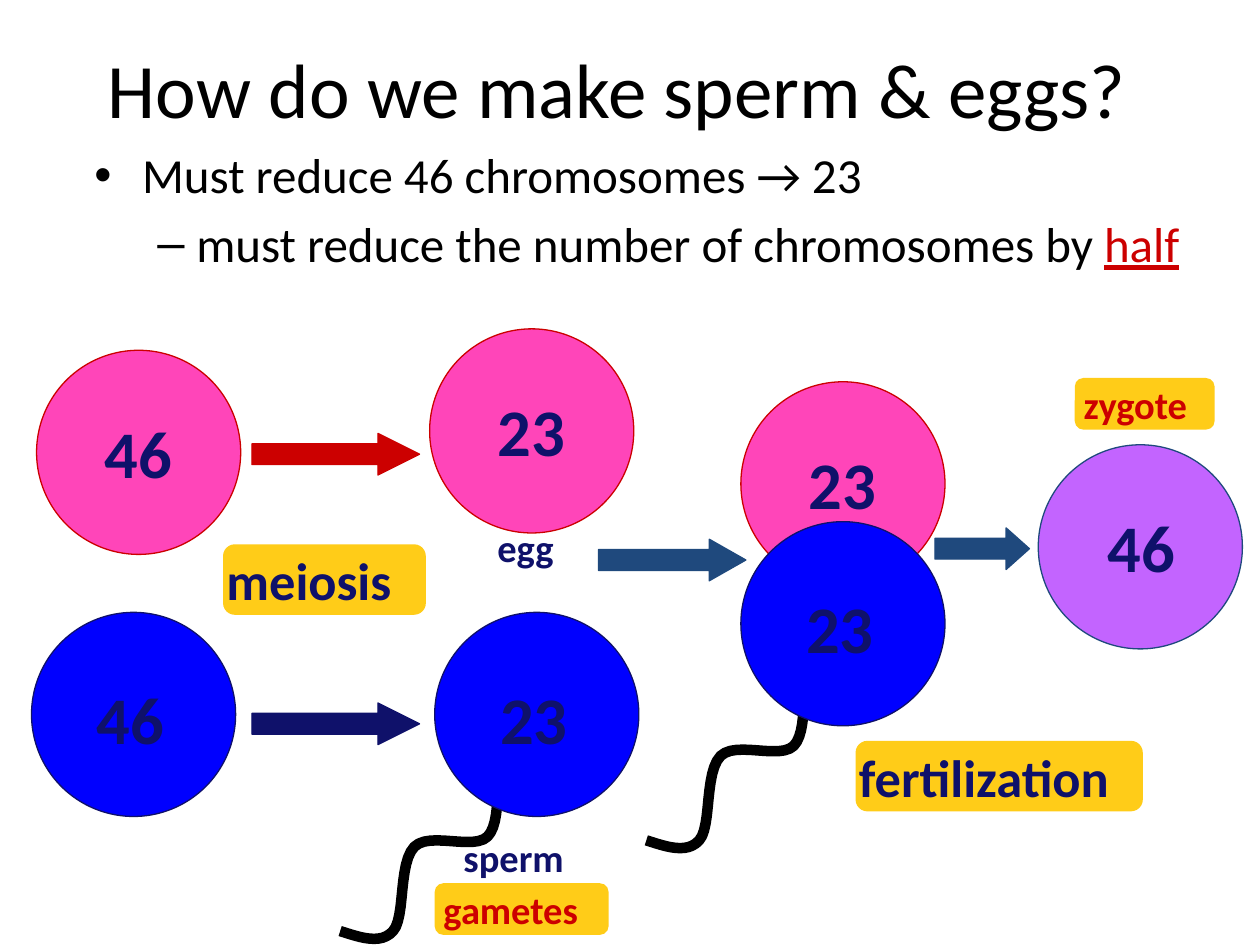
import pptx
import pptx.dml.color
import pptx.enum.shapes
import pptx.enum.text
import pptx.util
from lxml import etree

RGB = pptx.dml.color.RGBColor
SHAPE = pptx.enum.shapes.MSO_SHAPE
ALIGN = pptx.enum.text.PP_ALIGN
ANCHOR = pptx.enum.text.MSO_ANCHOR
Inches, Pt = pptx.util.Inches, pptx.util.Pt

BLACK = RGB(0x00, 0x00, 0x00)
RED = RGB(0xCC, 0x00, 0x00)
NAVY = RGB(0x0F, 0x11, 0x6A)
STEEL = RGB(0x1F, 0x49, 0x7D)
PINK = RGB(0xFF, 0x45, 0xB9)
BLUE = RGB(0x00, 0x00, 0xFF)
PURPLE = RGB(0xC3, 0x64, 0xFF)
YELLOW = RGB(0xFF, 0xCC, 0x18)

FONT = "Calibri"
CELL = 1.62
NUMBER = (0.79, 0.73)
ARROW_H = 0.33
TAG_H = {30: 0.56, 22: 0.41}

TITLE = "How do we make sperm & eggs?"
# bullet, left margin, hanging indent, runs of (text, format)
BULLETS = [
    ("•", 0.38, 0.38, [("Must reduce 46 chromosomes → 23", {})]),
    ("–", 0.81, 0.31, [("must reduce the number of chromosomes by ", {}),
                       ("half", {"color": RED, "underline": True})]),
]
# kind: fill, outline, offset of the number in the cell
CELL_KINDS = {
    "female": (PINK, RED, (0.44, 0.44)),
    "male": (BLUE, NAVY, (0.42, 0.47)),
    "zygote": (PURPLE, STEEL, (0.45, 0.44)),
}
# kind, chromosomes, left, top, has a tail; from back to front
CELLS = [
    ("female", "23", 3.41, 2.61, False),
    ("male", "23", 3.45, 4.86, True),
    ("male", "46", 0.25, 4.86, False),
    ("female", "46", 0.29, 2.78, False),
    ("zygote", "46", 8.24, 3.53, False),
    ("female", "23", 5.88, 3.03, False),
    ("male", "23", 5.88, 4.14, True),
]
# colour, left, top, width, head length as a share of the height
ARROWS = [
    (STEEL, 7.42, 4.19, 0.75, 0.56),
    (RED, 2.0, 3.44, 1.33, 1.0),
    (NAVY, 2.0, 5.58, 1.33, 1.0),
    (STEEL, 4.75, 4.28, 1.17, 0.88),
]
# text, left, top, width, size, colour, side inset
TAGS = [
    ("meiosis", 1.77, 4.32, 1.61, 30, NAVY, 0),
    ("fertilization", 6.79, 5.88, 2.28, 30, NAVY, 0),
    ("gametes", 3.45, 7.01, 1.38, 22, RED, 0.05),
    ("zygote", 8.53, 3.0, 1.11, 22, RED, 0.05),
]
# text, left, top, width
CAPTIONS = [("egg", 3.85, 4.11, 0.74), ("sperm", 3.58, 6.57, 1.12)]
# Bezier curve of the tail, measured from the cell's corner
TAIL_START = (0.50, 1.11)
TAIL_CURVES = [
    ((0.51, 1.10), (0.52, 1.08), (0.50, 1.20)),
    ((0.49, 1.31), (0.53, 1.67), (0.42, 1.78)),
    ((0.31, 1.89), (-0.04, 1.74), (-0.16, 1.86)),
    ((-0.29, 1.99), (-0.23, 2.42), (-0.33, 2.53)),
    ((-0.43, 2.64), (-0.59, 2.58), (-0.75, 2.53)),
]
TAIL_STEPS = 12


def add_run(p, text, size=28, color=BLACK, bold=False, underline=None):
    r = p.add_run()
    r.text = text
    f = r.font
    f.name, f.size, f.bold, f.underline = FONT, Pt(size), bold, underline
    f.color.rgb = color


def set_text(s, text, align=ALIGN.LEFT, anchor=ANCHOR.MIDDLE, insets=None, **fmt):
    tf = s.text_frame
    tf.word_wrap, tf.vertical_anchor = True, anchor
    if insets:
        tf.margin_left, tf.margin_top, tf.margin_right, tf.margin_bottom = map(Inches, insets)
    p = tf.paragraphs[0]
    p.alignment = align
    add_run(p, text, **fmt)


def add_box(shapes, *at):
    return shapes.add_textbox(*map(Inches, at))


def add_filled(shapes, preset, at, fill, line=None, adjustments=()):
    s = shapes.add_shape(preset, *map(Inches, at))
    s.shadow.inherit = False
    s.fill.solid()
    s.fill.fore_color.rgb = fill
    if line is None:
        s.line.fill.background()
    else:
        s.line.color.rgb, s.line.width = line, Pt(0.75)
    for i, value in enumerate(adjustments):
        s.adjustments[i] = value
    return s


def tail_points():
    points, a = [TAIL_START], TAIL_START
    for b, c, d in TAIL_CURVES:
        for t in (i / TAIL_STEPS for i in range(1, TAIL_STEPS + 1)):
            u = 1 - t
            points.append(tuple(
                u**3 * a[k] + 3 * u * u * t * b[k] + 3 * u * t * t * c[k] + t**3 * d[k]
                for k in (0, 1)))
        a = d
    return points


def add_tail(shapes, left, top):
    points = [(Inches(left + x), Inches(top + y)) for x, y in tail_points()]
    builder = shapes.build_freeform(*points[0])
    builder.add_line_segments(points[1:], close=False)
    s = builder.convert_to_shape()
    s.shadow.inherit = False
    s.fill.background()
    s.line.color.rgb, s.line.width = BLACK, Pt(6)


def add_cell(slide, kind, number, left, top, has_tail):
    fill, line, (dx, dy) = CELL_KINDS[kind]
    shapes = slide.shapes.add_group_shape().shapes
    if has_tail:
        add_tail(shapes, left, top)
    add_filled(shapes, SHAPE.OVAL, (left, top, CELL, CELL), fill, line)
    set_text(add_box(shapes, left + dx, top + dy, *NUMBER), number,
             size=38, color=NAVY, bold=True)


def add_bullets(slide):
    tf = add_box(slide.shapes, 0.65, 1.1, 9.35, 1.33).text_frame
    tf.word_wrap = True
    for i, (mark, margin, hang, runs) in enumerate(BULLETS):
        p = tf.add_paragraph() if i else tf.paragraphs[0]
        p.level, p.space_before = i, Pt(5.6)
        for text, fmt in runs:
            add_run(p, text, **fmt)
        pPr = p._p.get_or_add_pPr()
        pPr.set("marL", str(Inches(margin)))
        pPr.set("indent", str(-Inches(hang)))
        for tag, key, value in (("a:buFont", "typeface", "Arial"), ("a:buChar", "char", mark)):
            etree.SubElement(pPr, pptx.oxml.ns.qn(tag)).set(key, value)


def main():
    prs = pptx.Presentation()
    prs.slide_width, prs.slide_height = Inches(10), Inches(7.5)
    slide = prs.slides.add_slide(prs.slide_layouts[6])
    shapes = slide.shapes

    set_text(add_box(shapes, 0.65, 0.28, 8.5, 0.83), TITLE, align=ALIGN.CENTER, size=44)
    add_bullets(slide)
    for color, left, top, width, head in ARROWS:
        add_filled(shapes, SHAPE.RIGHT_ARROW, (left, top, width, ARROW_H),
                   color, color, (0.5, head))
    for cell in CELLS:
        add_cell(slide, *cell)
    for text, left, top, width in CAPTIONS:
        set_text(add_box(shapes, left, top, width, 0.47), text,
                 size=22, color=NAVY, bold=True)
    for text, left, top, width, size, color, inset in TAGS:
        s = add_filled(shapes, SHAPE.ROUNDED_RECTANGLE,
                       (left, top, width, TAG_H[size]), YELLOW)
        set_text(s, text, insets=(inset, 0, inset, 0), size=size, color=color, bold=True)

    prs.save("out.pptx")


if __name__ == "__main__":
    main()
